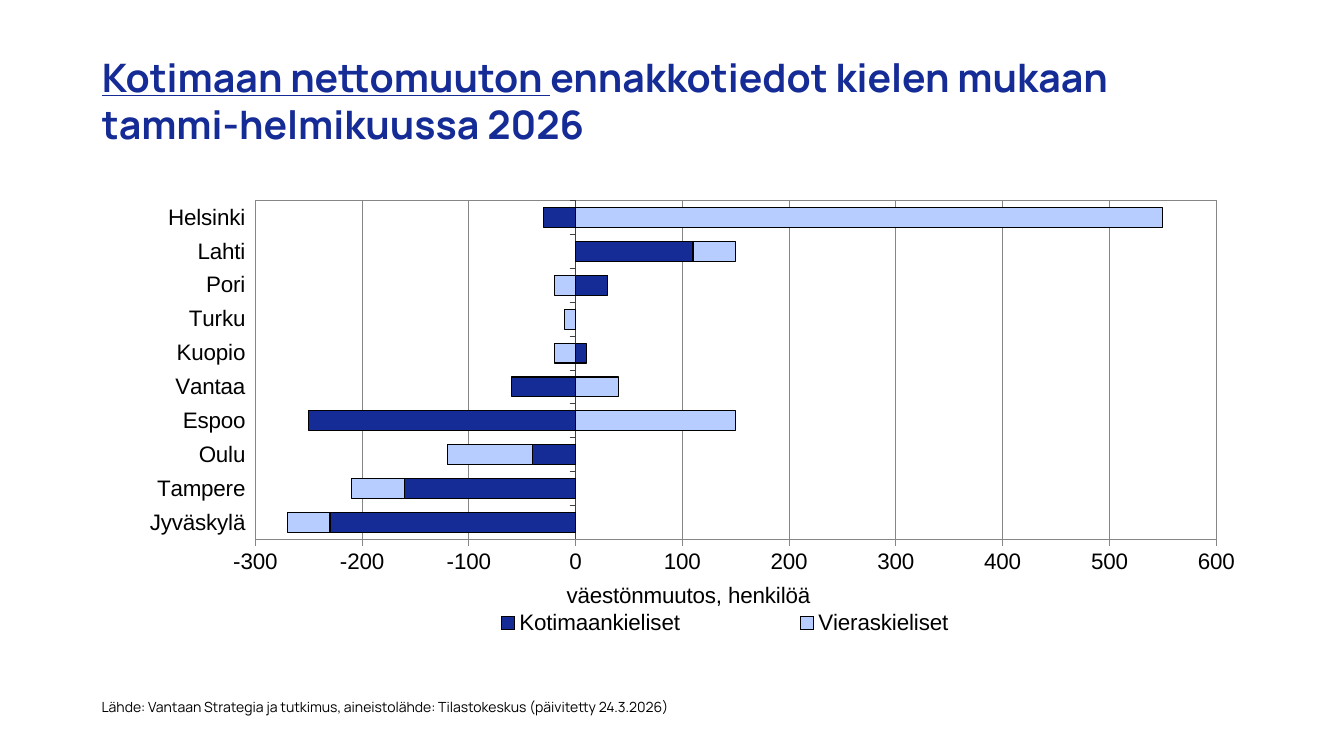
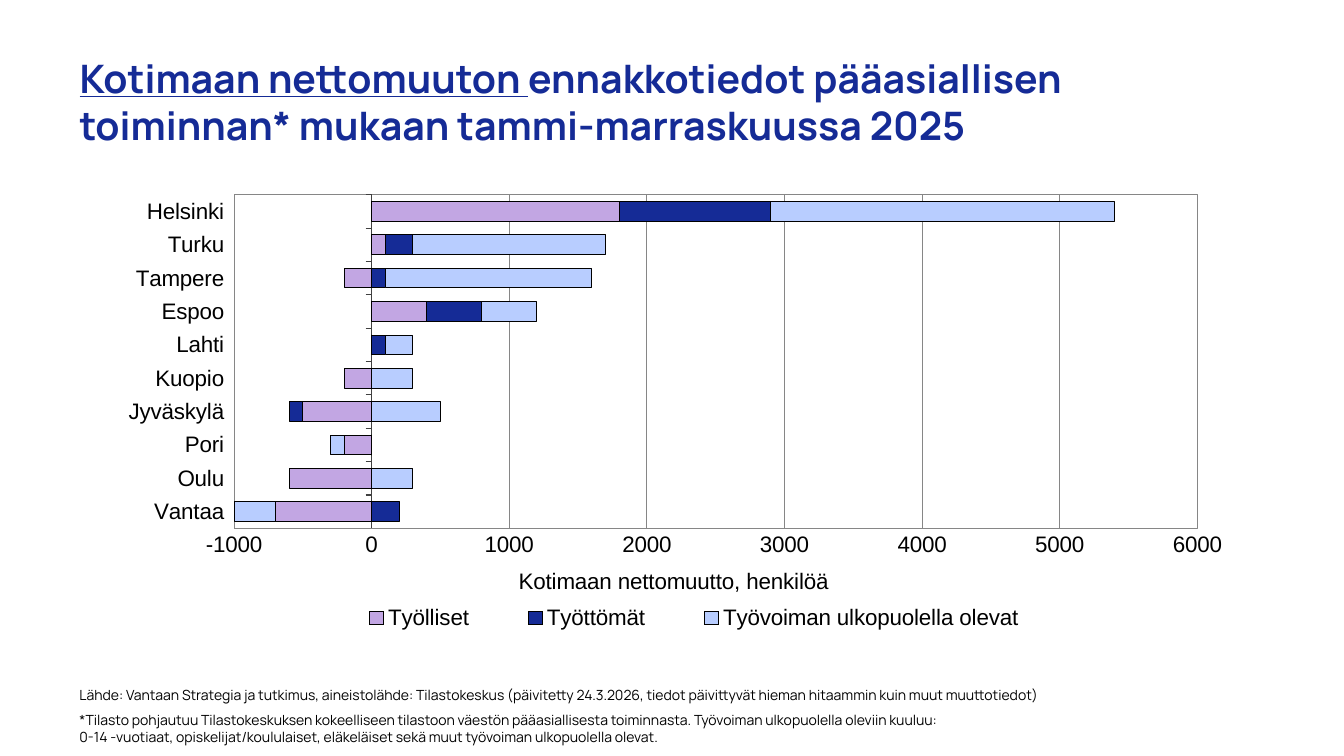
import pptx
import pptx.chart.data
import pptx.dml.color
import pptx.enum.chart
import pptx.enum.text
import pptx.oxml
import pptx.oxml.ns
import pptx.util

COLS, ROWS = 160, 90
NAVY, SKY, LILAC = "152B96", "B8CDFF", "C2A6E3"
BLACK, DARK, GRAY = "000000", "404040", "868686"
HEAD, BODY = "Manrope", "Arial"
LEAD = "Kotimaan nettomuuton "


def tint(code):
    return pptx.dml.color.RGBColor.from_string(code)


def style(font, name, size, color, bold=False):
    font.name, font.size, font.bold = name, pptx.util.Pt(size), bold
    font.color.rgb = tint(color)


def stroke(line, color):
    line.color.rgb = tint(color)
    line.width = pptx.util.Pt(0.75)


def place(node, index, share, inner=False):
    for old in node.xpath("./c:layout"):
        node.remove(old)
    tags = [("layoutTarget", "inner")] if inner else []
    tags += [("xMode", "edge"), ("yMode", "edge")]
    tags += zip("xywh", share)
    body = "".join(f'<c:{tag} val="{val}"/>' for tag, val in tags)
    xml = (f'<c:layout {pptx.oxml.ns.nsdecls("c")}>'
           f'<c:manualLayout>{body}</c:manualLayout></c:layout>')
    node.insert(index, pptx.oxml.parse_xml(xml))


class Deck:
    """Holds the shared style and the current slide."""

    def __init__(self):
        self.prs = pptx.Presentation()
        self.prs.slide_width = pptx.util.Inches(13.33)
        self.prs.slide_height = pptx.util.Inches(7.5)
        self.slide = None

    def grid(self, left, top, width, height):
        col = self.prs.slide_width / COLS
        row = self.prs.slide_height / ROWS
        return [round(n) for n in
                (left * col, top * row, width * col, height * row)]

    def page(self, text, left, height):
        self.slide = self.prs.slides.add_slide(self.prs.slide_layouts[5])
        title = self.slide.shapes.title
        spot = self.grid(left, 4.56, 134.64, height)
        title.left, title.top, title.width, title.height = spot
        frame = title.text_frame
        frame.word_wrap = True
        frame.auto_size = pptx.enum.text.MSO_AUTO_SIZE.NONE
        frame.vertical_anchor = pptx.enum.text.MSO_ANCHOR.MIDDLE
        para = frame.paragraphs[0]
        para.alignment = pptx.enum.text.PP_ALIGN.LEFT
        style(para.font, HEAD, 28, NAVY, True)
        for part, under in ((LEAD, True), (text, False)):
            run = para.add_run()
            run.text = part
            run.font.underline = under
            run.font.color.rgb = tint(NAVY)

    def notes(self, spot, lines):
        frame = self.slide.shapes.add_textbox(*self.grid(*spot)).text_frame
        frame.word_wrap = True
        for i, text in enumerate(lines):
            para = frame.paragraphs[0] if i == 0 else frame.add_paragraph()
            para.text = text
            if i == 1:
                para.space_before = pptx.util.Pt(6)
            style(para.font, HEAD, 10, BLACK)

    def bars(self, spot, cities, series, scale, label, ticks, parts):
        data = pptx.chart.data.CategoryChartData(number_format="0")
        data.categories = cities
        for name, color, vals in series:
            data.add_series(name, vals)
        kind = pptx.enum.chart.XL_CHART_TYPE.BAR_STACKED
        chart = self.slide.shapes.add_chart(
            kind, *self.grid(*spot), data).chart
        chart.has_title = False
        style(chart.font, BODY, 16, BLACK)
        plot = chart.plots[0]
        plot.gap_width, plot.overlap = 70, 100
        plot.vary_by_categories = False
        for item, (name, color, vals) in zip(plot.series, series):
            item.invert_if_negative = False
            item.format.fill.solid()
            item.format.fill.fore_color.rgb = tint(color)
            stroke(item.format.line, BLACK)
        self.axes(chart, scale, label, ticks)
        chart.has_legend = True
        chart.legend.position = pptx.enum.chart.XL_LEGEND_POSITION.BOTTOM
        chart.legend.include_in_layout = False
        style(chart.legend.font, BODY, 16, BLACK)
        area = chart.element.xpath(".//c:plotArea")[0]
        inner, title, legend = parts
        place(area, 0, inner, True)
        place(area.xpath("./c:valAx/c:title")[0], 1, title)
        place(chart.element.xpath(".//c:legend")[0], 1, legend)
        area.append(pptx.oxml.parse_xml(
            f'<c:spPr {pptx.oxml.ns.nsdecls("c", "a")}><a:noFill/>'
            f'<a:ln w="9525"><a:solidFill><a:srgbClr val="{GRAY}"/>'
            '</a:solidFill></a:ln></c:spPr>'))

    def axes(self, chart, scale, label, ticks):
        mark = pptx.enum.chart.XL_TICK_MARK
        cat, val = chart.category_axis, chart.value_axis
        cat.tick_label_position = pptx.enum.chart.XL_TICK_LABEL_POSITION.LOW
        cat.major_tick_mark = mark.OUTSIDE
        stroke(cat.format.line, DARK)
        val.minimum_scale, val.maximum_scale, val.major_unit = scale
        val.major_tick_mark = mark.OUTSIDE if ticks else mark.NONE
        val.has_major_gridlines = True
        stroke(val.major_gridlines.format.line, GRAY)
        stroke(val.format.line, GRAY)
        val.tick_labels.number_format = "0"
        val.tick_labels.number_format_is_linked = False
        for axis in (cat, val):
            style(axis.tick_labels.font, BODY, 16, BLACK)
        para = val.axis_title.text_frame.paragraphs[0]
        para.text = label
        style(para.font, BODY, 16, BLACK)


def main():
    deck = Deck()
    deck.page("ennakkotiedot kielen mukaan tammi-helmikuussa 2026",
              10.92, 14.76)
    deck.bars(
        (11.76, 22.2, 138, 54.72),
        ["Jyväskylä", "Tampere", "Oulu", "Espoo", "Vantaa",
         "Kuopio", "Turku", "Pori", "Lahti", "Helsinki"],
        [("Kotimaankieliset", NAVY,
          [-230, -160, -40, -250, -60, 10, 0, 30, 110, -30]),
         ("Vieraskieliset", SKY,
          [-40, -50, -80, 150, 40, -20, -10, -20, 40, 550])],
        (-300, 600, 100), "väestönmuutos, henkilöä", True,
        [(0.135, 0.03, 0.829, 0.739), (0.4, 0.85),
         (0.25, 0.91, 0.58, 0.08)])
    deck.notes((10.92, 82.56, 105.24, 3.6), [
        "Lähde: Vantaan Strategia ja tutkimus, aineistolähde: "
        "Tilastokeskus (päivitetty 24.3.2026)"])

    deck.page("ennakkotiedot pääasiallisen toiminnan* mukaan "
              "tammi-marraskuussa 2025", 8.28, 15)
    deck.bars(
        (10.2, 21.6, 138, 54.72),
        ["Vantaa", "Oulu", "Pori", "Jyväskylä", "Kuopio",
         "Lahti", "Espoo", "Tampere", "Turku", "Helsinki"],
        [("Työlliset", LILAC,
          [-700, -600, -200, -500, -200, 0, 400, -200, 100, 1800]),
         ("Työttömät", NAVY,
          [200, 0, 0, -100, 0, 100, 400, 100, 200, 1100]),
         ("Työvoiman ulkopuolella olevat", SKY,
          [-300, 300, -100, 500, 300, 200, 400, 1500, 1400, 2500])],
        (-1000, 6000, 1000), "Kotimaan nettomuutto, henkilöä", False,
        [(0.128, 0.029, 0.831, 0.726), (0.37, 0.83),
         (0.2, 0.91, 0.65, 0.08)])
    deck.notes((8.28, 81.12, 128.04, 7.44), [
        "Lähde: Vantaan Strategia ja tutkimus, aineistolähde: "
        "Tilastokeskus (päivitetty 24.3.2026, tiedot päivittyvät "
        "hieman hitaammin kuin muut muuttotiedot)",
        "*Tilasto pohjautuu Tilastokeskuksen kokeelliseen tilastoon "
        "väestön pääasiallisesta toiminnasta. Työvoiman ulkopuolella "
        "oleviin kuuluu:",
        "0-14 -vuotiaat, opiskelijat/koululaiset, eläkeläiset sekä "
        "muut työvoiman ulkopuolella olevat."])
    deck.prs.save("out.pptx")


if __name__ == "__main__":
    main()
